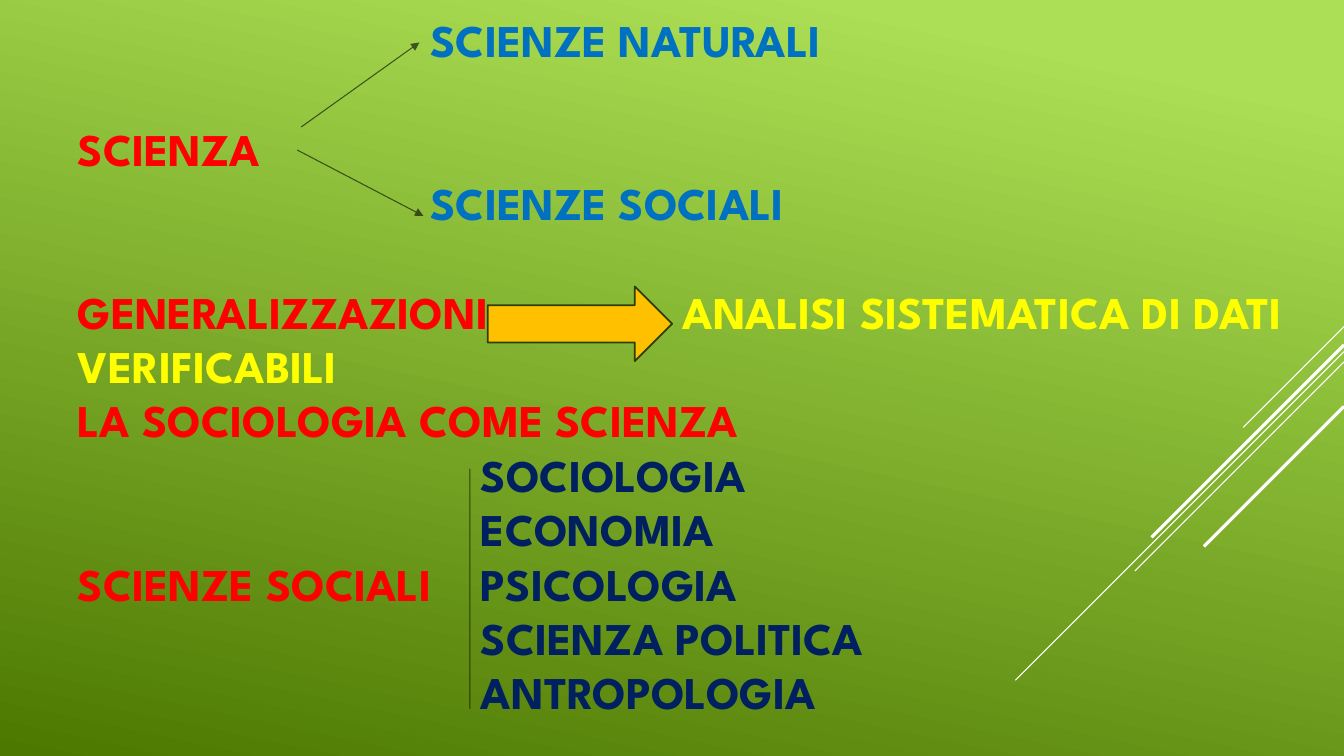
from dataclasses import dataclass

from pptx import Presentation
from pptx.dml.color import RGBColor
from pptx.enum.shapes import MSO_CONNECTOR, MSO_SHAPE
from pptx.enum.text import MSO_ANCHOR
from pptx.oxml.ns import qn
from pptx.slide import Slide
from pptx.util import Cm, Pt
from lxml.etree import SubElement


@dataclass(frozen=True)
class Theme:
    """Colours, type and line weights of the slide."""
    light: str = "ACDF55"
    dark: str = "4C7800"
    white: str = "FFFFFF"
    black: str = "000000"
    red: str = "FF0000"
    blue: str = "0070C0"
    yellow: str = "FFFF00"
    navy: str = "002060"
    amber: str = "FFC000"
    outline: str = "2E3E07"
    font: str = "League Spartan"
    size: float = 32.4
    thin: float = 0.75
    medium: float = 1.25
    thick: float = 2.25


@dataclass(frozen=True)
class Label:
    """A term placed by text row and tab stop."""
    text: str
    row: int
    tab: int
    color: str


@dataclass(frozen=True)
class Stroke:
    """A straight line between two points in centimetres."""
    x1: float
    y1: float
    x2: float
    y2: float
    color: str
    weight: float
    opacity: int = 100
    arrow: bool = False


THEME = Theme()
SLIDE_WIDTH, SLIDE_HEIGHT = 33.87, 19.05
TEXT_LEFT, TEXT_RIGHT, TAB_STEP = 1.96, 33.4, 1.27
FIRST_ROW, ROW_STEP = 0.39, 1.37

BRANCHES_TAB, DISCIPLINES_TAB, ANALYSIS_TAB = 7, 8, 12
DISCIPLINES = ["SOCIOLOGIA", "ECONOMIA", "PSICOLOGIA", "SCIENZA POLITICA", "ANTROPOLOGIA"]

LABELS = [
    Label("SCIENZE NATURALI", 0, BRANCHES_TAB, THEME.blue),
    Label("SCIENZA", 2, 0, THEME.red),
    Label("SCIENZE SOCIALI", 3, BRANCHES_TAB, THEME.blue),
    Label("GENERALIZZAZIONI", 5, 0, THEME.red),
    Label("ANALISI SISTEMATICA DI DATI", 5, ANALYSIS_TAB, THEME.yellow),
    Label("VERIFICABILI", 6, 0, THEME.yellow),
    Label("LA SOCIOLOGIA COME SCIENZA", 7, 0, THEME.red),
    Label("SCIENZE SOCIALI", 10, 0, THEME.red),
    *(Label(name, row, DISCIPLINES_TAB, THEME.navy) for row, name in enumerate(DISCIPLINES, 8)),
]

DECORATION = [
    Stroke(SLIDE_WIDTH, top, SLIDE_WIDTH - run, top + run, THEME.white, weight)
    for top, run, weight in [
        (8.23, 2.54, THEME.thin),
        (8.86, 8.28, THEME.thin),
        (9.12, 5.27, THEME.thin),
        (8.69, 4.85, THEME.thick),
        (10.24, 3.53, THEME.thick),
    ]
]

DIAGRAM = [
    Stroke(7.59, 3.2, 10.57, 1.07, THEME.black, THEME.thin, 60, True),
    Stroke(7.49, 3.78, 10.67, 5.44, THEME.black, THEME.thin, 60, True),
    Stroke(11.84, 11.81, 11.84, 17.86, THEME.black, THEME.thin, 60),
]


def rgb(color: str) -> RGBColor:
    """Turn a hex string into a colour."""
    return RGBColor.from_string(color)


def paint_background(slide: Slide) -> None:
    """Fill the background with the green gradient."""
    fill = slide.background.fill
    fill.gradient()
    fill.gradient_angle = 258
    for stop, position, color in zip(fill.gradient_stops, (0.1, 1), (THEME.light, THEME.dark)):
        stop.position = position
        stop.color.rgb = rgb(color)


def draw_stroke(slide: Slide, stroke: Stroke) -> None:
    """Draw one line, with its opacity and arrowhead."""
    connector = slide.shapes.add_connector(
        MSO_CONNECTOR.STRAIGHT, Cm(stroke.x1), Cm(stroke.y1), Cm(stroke.x2), Cm(stroke.y2))
    connector.line.color.rgb = rgb(stroke.color)
    connector.line.width = Pt(stroke.weight)
    properties = connector.element.spPr
    if stroke.opacity < 100:
        color = next(properties.iter(qn("a:srgbClr")))
        SubElement(color, qn("a:alpha"), val=str(stroke.opacity * 1000))
    if stroke.arrow:
        SubElement(properties.find(qn("a:ln")), qn("a:tailEnd"), type="triangle")
    SubElement(properties, qn("a:effectLst"))


def write_label(slide: Slide, label: Label) -> None:
    """Write one term on its row."""
    left = TEXT_LEFT + label.tab * TAB_STEP
    top = FIRST_ROW + label.row * ROW_STEP
    frame = slide.shapes.add_textbox(
        Cm(left), Cm(top), Cm(TEXT_RIGHT - left), Cm(ROW_STEP)).text_frame
    frame.word_wrap = True
    frame.vertical_anchor = MSO_ANCHOR.MIDDLE
    frame.margin_left = frame.margin_right = frame.margin_top = frame.margin_bottom = 0
    paragraph = frame.paragraphs[0]
    paragraph.text = label.text
    paragraph.line_spacing = 0.9
    paragraph.font.name = THEME.font
    paragraph.font.size = Pt(THEME.size)
    paragraph.font.bold = True
    paragraph.font.color.rgb = rgb(label.color)


def draw_analysis_arrow(slide: Slide) -> None:
    """Draw the block arrow from generalisations to analysis."""
    arrow = slide.shapes.add_shape(
        MSO_SHAPE.RIGHT_ARROW, Cm(12.29), Cm(7.22), Cm(4.65), Cm(1.88))
    arrow.shadow.inherit = False
    arrow.fill.solid()
    arrow.fill.fore_color.rgb = rgb(THEME.amber)
    arrow.line.color.rgb = rgb(THEME.outline)
    arrow.line.width = Pt(THEME.medium)


def main() -> None:
    """Build and save the slide."""
    presentation = Presentation()
    presentation.slide_width = Cm(SLIDE_WIDTH)
    presentation.slide_height = Cm(SLIDE_HEIGHT)
    slide = presentation.slides.add_slide(presentation.slide_layouts[6])
    paint_background(slide)
    for stroke in DECORATION:
        draw_stroke(slide, stroke)
    for label in LABELS:
        write_label(slide, label)
    for stroke in DIAGRAM:
        draw_stroke(slide, stroke)
    draw_analysis_arrow(slide)
    presentation.save("out.pptx")


if __name__ == "__main__":
    main()
